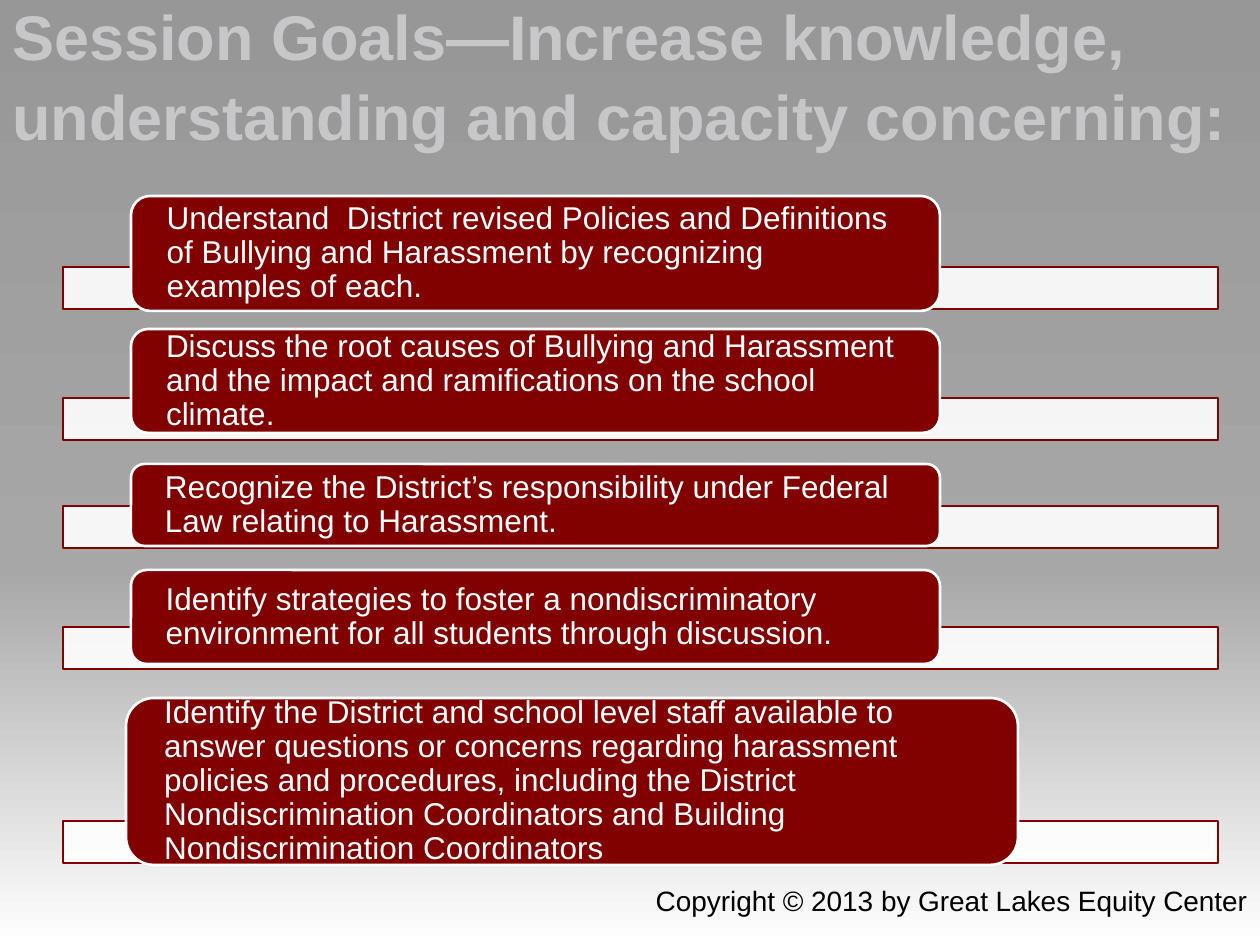
"""Build the session goals slide: five goal cards, each over a thin bar."""
import pptx
import pptx.dml.color
import pptx.enum.shapes
import pptx.enum.text
import pptx.oxml.ns
import pptx.util
from lxml import etree

PX = 914400 // 126
SLIDE = (1260, 945)
MAROON, WHITE = "810000", "FFFFFF"
BACKGROUND_STOPS = [(0, "979797"), (60, "A7A7A7"), (100, "FFFFFF")]
TITLE = "Session Goals—Increase knowledge, understanding and capacity concerning:"
COPYRIGHT = "Copyright © 2013 by Great Lakes Equity Center"

BAR_LEFT, BAR_WIDTH, BAR_HEIGHT = 63, 1155, 42
CARD, WIDE_CARD = (131, 809), (126, 892)
# (text, card left and width, card top, card height, bar top)
GOALS = [
    ("Understand  District revised Policies and Definitions of Bullying and "
     "Harassment by recognizing examples of each.", CARD, 196, 115, 267),
    ("Discuss the root causes of Bullying and Harassment and the impact and "
     "ramifications on the school climate.", CARD, 329, 104, 398),
    ("Recognize the District’s responsibility under Federal Law relating to "
     "Harassment.", CARD, 464, 82, 506),
    ("Identify strategies to foster a nondiscriminatory environment for all "
     "students through discussion.", CARD, 570, 94, 627),
    ("Identify the District and school level staff available to answer questions "
     "or concerns regarding harassment policies and procedures, including the "
     "District Nondiscrimination Coordinators and Building Nondiscrimination "
     "Coordinators", WIDE_CARD, 698, 167, 821),
]

Shape = pptx.enum.shapes.MSO_SHAPE
Align = pptx.enum.text.PP_ALIGN
Anchor = pptx.enum.text.MSO_ANCHOR
qn = pptx.oxml.ns.qn


def rgb(value):
    """Return the colour for a hex string."""
    return pptx.dml.color.RGBColor.from_string(value)


def emu(*lengths):
    """Scale px lengths to EMU."""
    return [length * PX for length in lengths]


def assign(target, values):
    """Set each attribute named in a dict."""
    for name, value in values.items():
        setattr(target, name, value)


def write(holder, text, size, colour, bold=False, frame=None, paragraph=None):
    """Put one formatted paragraph in a shape."""
    assign(holder.text_frame, {"word_wrap": True, **(frame or {})})
    line = holder.text_frame.paragraphs[0]
    assign(line, {"alignment": Align.LEFT, **(paragraph or {})})
    run = line.add_run()
    run.text = text
    assign(run.font, {"name": "Arial", "size": pptx.util.Pt(size), "bold": bold})
    run.font.color.rgb = rgb(colour)


def add_block(slide, kind, box, fill, line, opacity=100):
    """Add a filled and outlined shape."""
    block = slide.shapes.add_shape(kind, *emu(*box))
    block.shadow.inherit = False
    block.fill.solid()
    block.fill.fore_color.rgb = rgb(fill)
    block.line.color.rgb = rgb(line)
    block.line.width = pptx.util.Pt(1.5)
    if opacity < 100:
        colour = block.fill._xPr.find(qn("a:solidFill"))[0]
        etree.SubElement(colour, qn("a:alpha"), val=str(opacity * 1000))
    return block


def paint_background(slide):
    """Fill the background with a gradient from top to bottom."""
    fill = slide.background.fill
    fill.gradient()
    fill.gradient_angle = 270
    stops = next(slide.element.iter(qn("a:gsLst")))
    for stop in list(stops):
        stops.remove(stop)
    for position, colour in BACKGROUND_STOPS:
        stop = etree.SubElement(stops, qn("a:gs"), pos=str(position * 1000))
        etree.SubElement(stop, qn("a:srgbClr"), val=colour)


def main():
    """Build and save the slide."""
    deck = pptx.Presentation()
    deck.slide_width, deck.slide_height = emu(*SLIDE)
    slide = deck.slides.add_slide(deck.slide_layouts[6])
    paint_background(slide)

    side, none = emu(30, 0)
    card_frame = {"vertical_anchor": Anchor.MIDDLE, "margin_left": side,
                  "margin_right": side, "margin_top": none, "margin_bottom": none}
    for text, (left, width), top, height, bar_top in GOALS:
        add_block(slide, Shape.RECTANGLE, (BAR_LEFT, bar_top, BAR_WIDTH, BAR_HEIGHT),
                  WHITE, MAROON, opacity=90)
        card = add_block(slide, Shape.ROUNDED_RECTANGLE, (left, top, width, height),
                         MAROON, WHITE)
        write(card, text, 18, WHITE, frame=card_frame, paragraph={"line_spacing": 0.9})

    title = slide.shapes.add_textbox(*emu(0, 0, 1260, 147))
    write(title, TITLE, 36, "C7C7CA", bold=True,
          frame={"vertical_anchor": Anchor.MIDDLE}, paragraph={"line_spacing": 1.05})
    notice = slide.shapes.add_textbox(*emu(535, 877, 725, 47))
    write(notice, COPYRIGHT, 16, "000000", paragraph={"alignment": Align.RIGHT})
    deck.save("out.pptx")


if __name__ == "__main__":
    main()
